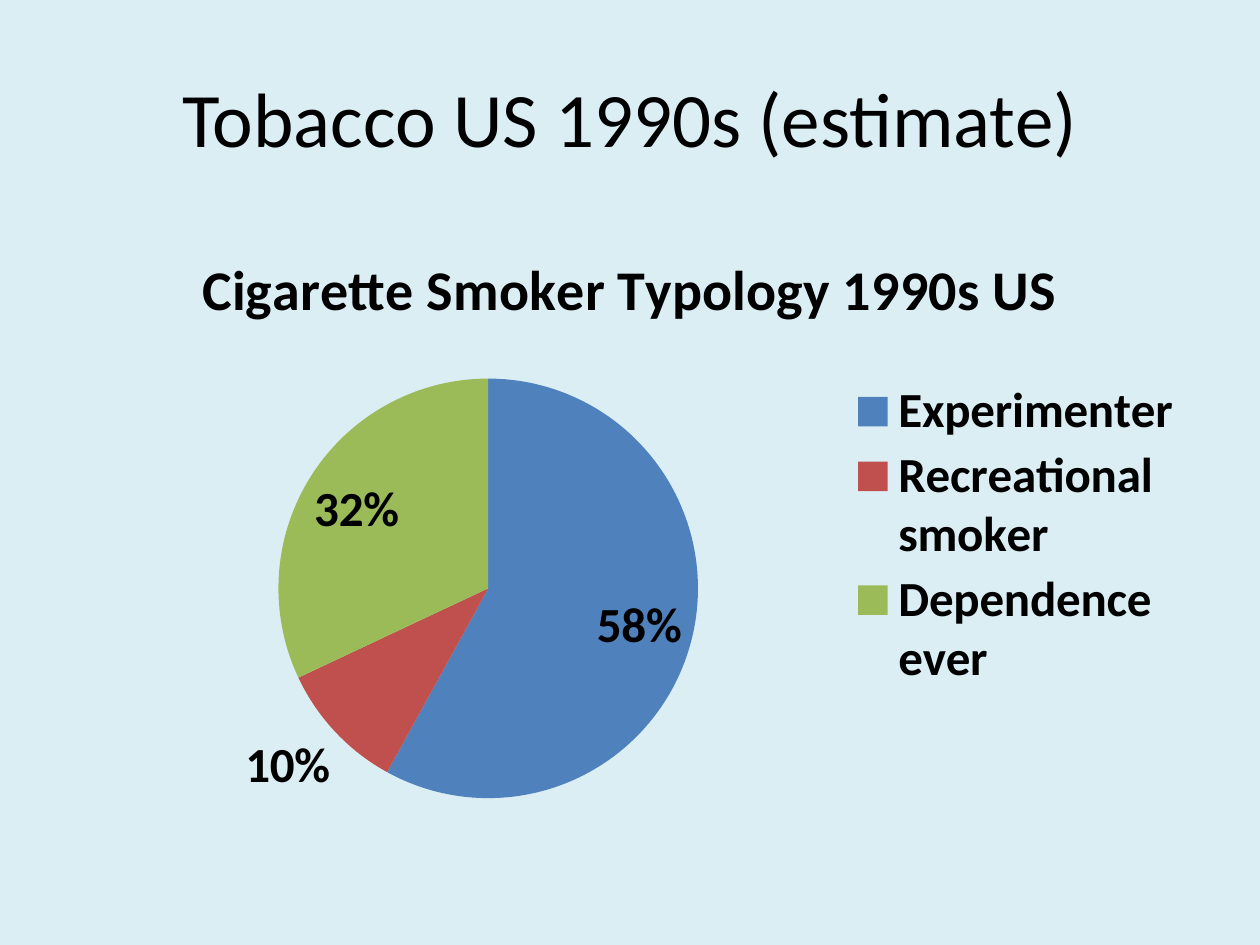
from dataclasses import dataclass

from lxml import etree
from pptx import Presentation
from pptx import util as u
from pptx.chart import data as chart_data
from pptx.dml.color import RGBColor
from pptx.enum import chart as kinds, text
from pptx.oxml import ns

# Content
HEADING = "Tobacco US 1990s (estimate)"
CHART_TITLE = "Cigarette Smoker Typology 1990s US"
SMOKERS = {"Experimenter": 0.58, "Recreational smoker": 0.1, "Dependence ever": 0.32}

# Geometry: 100 px to the inch
PX = 9144
PAGE = (1000, 750)
HEADING_BOX = (50, 30, 900, 125)
CHART_BOX = (50, 175, 900, 495)
# Shares of the chart frame
PIE_AREA = {"x": 0.19, "y": 0.25, "w": 0.37, "h": 0.68}
LEGEND_AREA = {"x": 0.69, "y": 0.25, "w": 0.3, "h": 0.51}


@dataclass(frozen=True)
class Theme:
    font: str = "Calibri"
    ink: str = "000000"
    background: str = "DBEEF4"
    slices: tuple = ("4F81BD", "C0504D", "9BBB59")
    heading: int = 44
    chart_title: int = 32
    chart_text: int = 28


THEME = Theme()


def emu(lengths):
    return [length * PX for length in lengths]


def assign(target, **values):
    for name, value in values.items():
        setattr(target, name, value)


def paint(fill, colour):
    fill.solid()
    fill.fore_color.rgb = RGBColor.from_string(colour)


def style(font, size, bold):
    assign(font, name=THEME.font, size=u.Pt(size), bold=bold)
    font.color.rgb = RGBColor.from_string(THEME.ink)


def place(element, area, index, inner=False):
    """Give a chart part a fixed position inside the chart frame."""
    for old in element.findall(ns.qn("c:layout")):
        element.remove(old)
    layout = etree.Element(ns.qn("c:layout"))
    manual = etree.SubElement(layout, ns.qn("c:manualLayout"))
    settings = [("layoutTarget", "inner")] if inner else []
    settings += [("xMode", "edge"), ("yMode", "edge"), *area.items()]
    for tag, value in settings:
        etree.SubElement(manual, ns.qn(f"c:{tag}")).set("val", str(value))
    element.insert(index, layout)


def add_heading(page):
    box = page.shapes.add_textbox(*emu(HEADING_BOX))
    frame = box.text_frame
    assign(frame, word_wrap=True, vertical_anchor=text.MSO_ANCHOR.MIDDLE)
    para = frame.paragraphs[0]
    para.alignment = text.PP_ALIGN.CENTER
    span = para.add_run()
    span.text = HEADING
    style(span.font, THEME.heading, False)


def add_pie(page):
    data = chart_data.CategoryChartData(number_format="0%")
    data.categories = list(SMOKERS)
    data.add_series("Series 1", list(SMOKERS.values()))
    chart = page.shapes.add_chart(
        kinds.XL_CHART_TYPE.PIE, *emu(CHART_BOX), data).chart
    style(chart.font, THEME.chart_text, True)

    # Title
    chart.has_title = True
    frame = chart.chart_title.text_frame
    frame.text = CHART_TITLE
    style(frame.paragraphs[0].runs[0].font, THEME.chart_title, True)

    # Slices and their labels
    plot = chart.plots[0]
    assign(plot, vary_by_categories=True, has_data_labels=True)
    for i, colour in enumerate(THEME.slices):
        paint(plot.series[0].points[i].format.fill, colour)
    labels = plot.data_labels
    assign(labels, show_value=True, number_format="0%",
           number_format_is_linked=False,
           position=kinds.XL_LABEL_POSITION.BEST_FIT)
    style(labels.font, THEME.chart_text, True)
    place(plot._element.getparent(), PIE_AREA, 0, inner=True)

    # Legend
    chart.has_legend = True
    legend = chart.legend
    assign(legend, position=kinds.XL_LEGEND_POSITION.RIGHT, include_in_layout=False)
    style(legend.font, THEME.chart_text, True)
    place(legend._element, LEGEND_AREA, 1)


def main():
    deck = Presentation()
    deck.slide_width, deck.slide_height = emu(PAGE)
    page = deck.slides.add_slide(deck.slide_layouts[6])
    paint(page.background.fill, THEME.background)
    add_heading(page)
    add_pie(page)
    deck.save("out.pptx")


if __name__ == "__main__":
    main()
